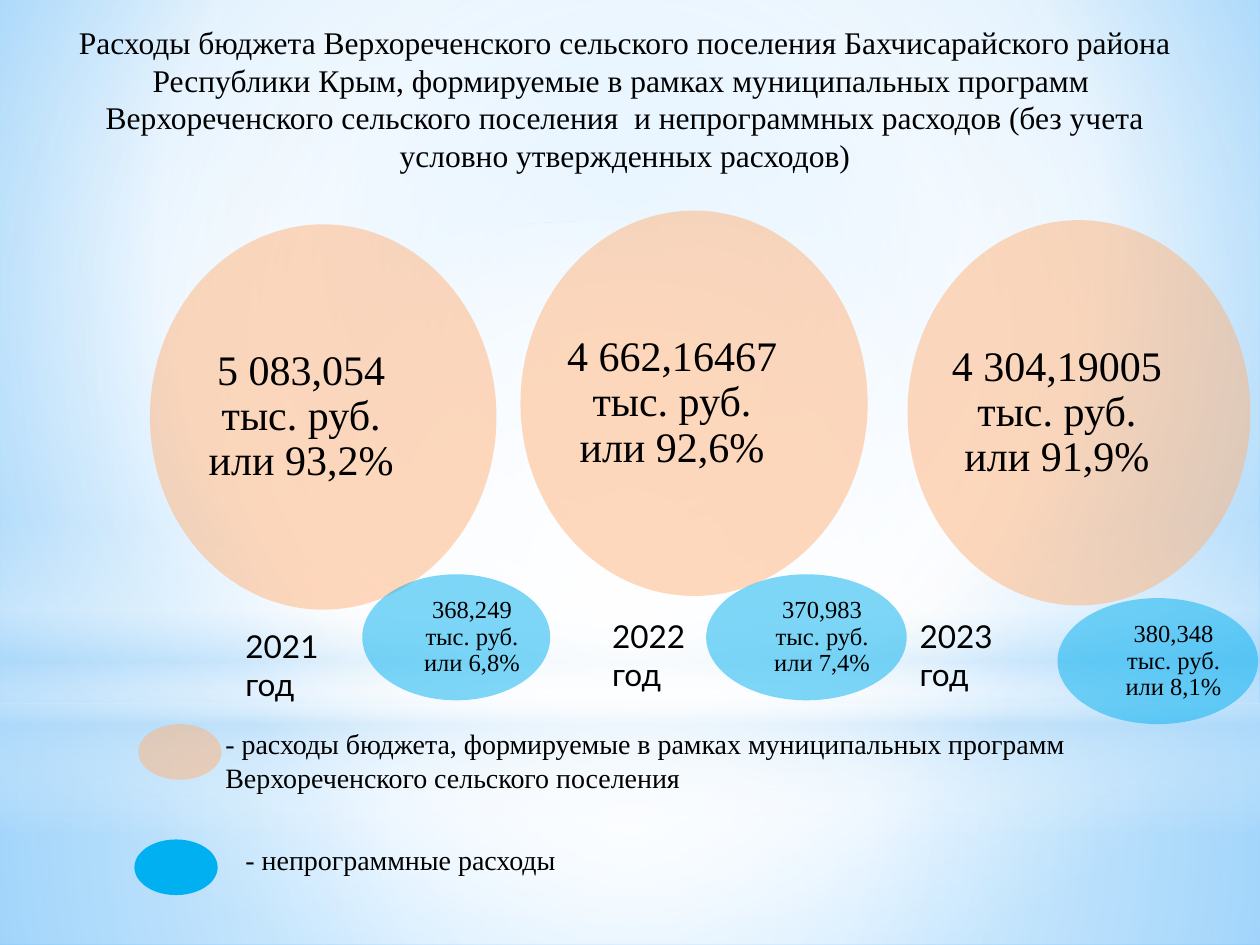
from lxml import etree
from pptx import Presentation
from pptx.dml.color import RGBColor
from pptx.enum import shapes, text
from pptx.oxml import ns
from pptx.util import Pt

COLORS = {"ink": "000000", "program": "FFB37A", "other": "00B0F0",
          "white": "FFFFFF", "mist": "B4DCFA", "sky": "9ED5FF", "azure": "5BB9FF"}
SERIF, SANS = "Times New Roman", "Lato"
WIDTH, HEIGHT = 720, 540
OVAL, RECT = shapes.MSO_SHAPE.OVAL, shapes.MSO_SHAPE.RECTANGLE
OVAL_INSET = 0.1464  # share of an ellipse's side left outside its text area

TITLE = ("Расходы бюджета Верхореченского сельского поселения Бахчисарайского района "
         "Республики Крым, формируемые в рамках муниципальных программ  Верхореченского "
         "сельского поселения  и непрограммных расходов (без учета условно утвержденных расходов)")
TITLE_PLACE = (31, 9.4, 652.3, 94.3)

# Gradient stops are (position, colour, opacity), all in percent
BACKDROP = ([(0, "sky", 100), (60, "white", 100), (100, "azure", 100)], (20, 10, 20, 60))
CENTRE = (50, 50, 50, 50)
GLOWS = [
    (RECT, (0, 401.8, WIDTH, 138.2),
     [(0, "white", 91), (37, "white", 76), (100, "mist", 79)], CENTRE),
    (RECT, (0, 0, WIDTH, 401.8),
     [(0, "white", 89), (48, "white", 62), (100, "mist", 79)], CENTRE),
    (RECT, (0, 296.6, WIDTH, 180),
     [(0, "white", 0), (29, "white", 30), (45, "mist", 40), (55, "white", 26),
      (65, "mist", 60), (100, "white", 0)], None),
    (OVAL, (0, 126, WIDTH, 401.8), [(0, "white", 100), (56, "white", 0)], CENTRE),
]

LEGEND = [
    ("program", 50, (79, 413.8), (121.7, 411.8, 555.8, 46),
     "- расходы бюджета, формируемые в рамках муниципальных программ "
     "Верхореченского сельского поселения"),
    ("other", 100, (76.8, 479.7), (133.2, 478, 487.4, 26.6), "- непрограммные расходы"),
]
MARKER = (47.6, 31.8)

# Each place is (left, top, width)
YEARS = [
    ("2021 год", (133.2, 355, 79.2),
     "5 083,054 тыс. руб. или 93,2%", (85.7, 128.2, 198),
     "368,249 тыс. руб. или 6,8%", (207, 328.2, 107.4)),
    ("2022 год", (342.7, 349.2, 58.3),
     "4 662,16467 тыс. руб. или 92,6%", (297.4, 120.4, 198.4),
     "370,983 тыс. руб. или 7,4%", (403.5, 328.2, 114.6)),
    ("2023 год", (518.4, 349.2, 79.2),
     "4 304,19005 тыс. руб. или 91,9%", (518.6, 125.8, 196),
     "380,348 тыс. руб. или 8,1%", (604.3, 341.8, 114.6)),
]
# Text margins are left and right, from the edges of the ellipse
BUBBLES = {"program": {"height": 220.2, "size": 24, "margins": (24.5, 49.7)},
           "other": {"height": 72, "size": 14, "margins": (35.3, 17.3)}}


def lengths(place):
    return [Pt(value) for value in place]


def apply(target, values):
    for name, value in values.items():
        setattr(target, name, value)


def write(frame, words, font, size, **paragraph_format):
    apply(frame, {"word_wrap": True, "auto_size": text.MSO_AUTO_SIZE.NONE})
    para = frame.paragraphs[0]
    apply(para, paragraph_format)
    span = para.add_run()
    span.text = words
    apply(span.font, {"name": font, "size": Pt(size)})
    span.font.color.rgb = RGBColor.from_string(COLORS["ink"])


def add_label(page, place, words, font, size):
    box = page.shapes.add_textbox(*lengths(place))
    write(box.text_frame, words, font, size)


def add_filled(page, kind, place, color, opacity=100):
    shape = page.shapes.add_shape(kind, *lengths(place))
    shape.shadow.inherit = False
    shape.line.fill.background()
    shape.fill.solid()
    shape.fill.fore_color.rgb = RGBColor.from_string(COLORS[color])
    if opacity < 100:
        tint = shape.element.spPr.find(ns.qn("a:solidFill"))[0]
        etree.SubElement(tint, ns.qn("a:alpha"), val=str(opacity * 1000))
    return shape


def set_gradient(holder, stops, focus):
    """Replace the solid fill in holder; without a focus the gradient runs downwards."""
    gradient = etree.Element(ns.qn("a:gradFill"), rotWithShape="1")
    stop_list = etree.SubElement(gradient, ns.qn("a:gsLst"))
    for position, color, opacity in stops:
        stop = etree.SubElement(stop_list, ns.qn("a:gs"), pos=str(position * 1000))
        tint = etree.SubElement(stop, ns.qn("a:srgbClr"), val=COLORS[color])
        if opacity < 100:
            etree.SubElement(tint, ns.qn("a:alpha"), val=str(opacity * 1000))
    if focus:
        shade = etree.SubElement(gradient, ns.qn("a:path"), path="circle")
        sides = {side: str(share * 1000) for side, share in zip("ltrb", focus)}
        etree.SubElement(shade, ns.qn("a:fillToRect"), **sides)
    else:
        etree.SubElement(gradient, ns.qn("a:lin"), ang="5400000", scaled="0")
    holder.replace(holder.find(ns.qn("a:solidFill")), gradient)


def add_bubble(page, color, place, words):
    style = BUBBLES[color]
    bubble = add_filled(page, OVAL, (*place, style["height"]), color, 50)
    left, right = (Pt(margin - place[2] * OVAL_INSET) for margin in style["margins"])
    apply(bubble.text_frame, {"margin_left": left, "margin_right": right,
                              "margin_top": 0, "margin_bottom": 0,
                              "vertical_anchor": text.MSO_ANCHOR.MIDDLE})
    write(bubble.text_frame, words, SERIF, style["size"],
          alignment=text.PP_ALIGN.CENTER, line_spacing=0.9)


def main():
    deck = Presentation()
    apply(deck, {"slide_width": Pt(WIDTH), "slide_height": Pt(HEIGHT)})
    page = deck.slides.add_slide(deck.slide_layouts[5])

    page.background.fill.solid()
    page.background.fill.fore_color.rgb = RGBColor.from_string(COLORS["white"])
    set_gradient(page.element.find(".//" + ns.qn("p:bgPr")), *BACKDROP)
    for kind, place, stops, focus in GLOWS:
        glow = add_filled(page, kind, place, "white")
        set_gradient(glow.element.spPr, stops, focus)

    title = page.shapes.title
    apply(title, dict(zip(("left", "top", "width", "height"), lengths(TITLE_PLACE))))
    title.text_frame.vertical_anchor = text.MSO_ANCHOR.TOP
    write(title.text_frame, TITLE, SERIF, 18, alignment=text.PP_ALIGN.CENTER)
    title.element.getparent().append(title.element)

    for color, opacity, corner, place, words in LEGEND:
        add_filled(page, OVAL, (*corner, *MARKER), color, opacity)
        add_label(page, place, words, SERIF, 16)

    for year, year_place, program, program_place, other, other_place in YEARS:
        add_bubble(page, "program", program_place, program)
        add_bubble(page, "other", other_place, other)
        add_label(page, (*year_place, 51), year, SANS, 18)

    deck.save("out.pptx")


if __name__ == "__main__":
    main()
